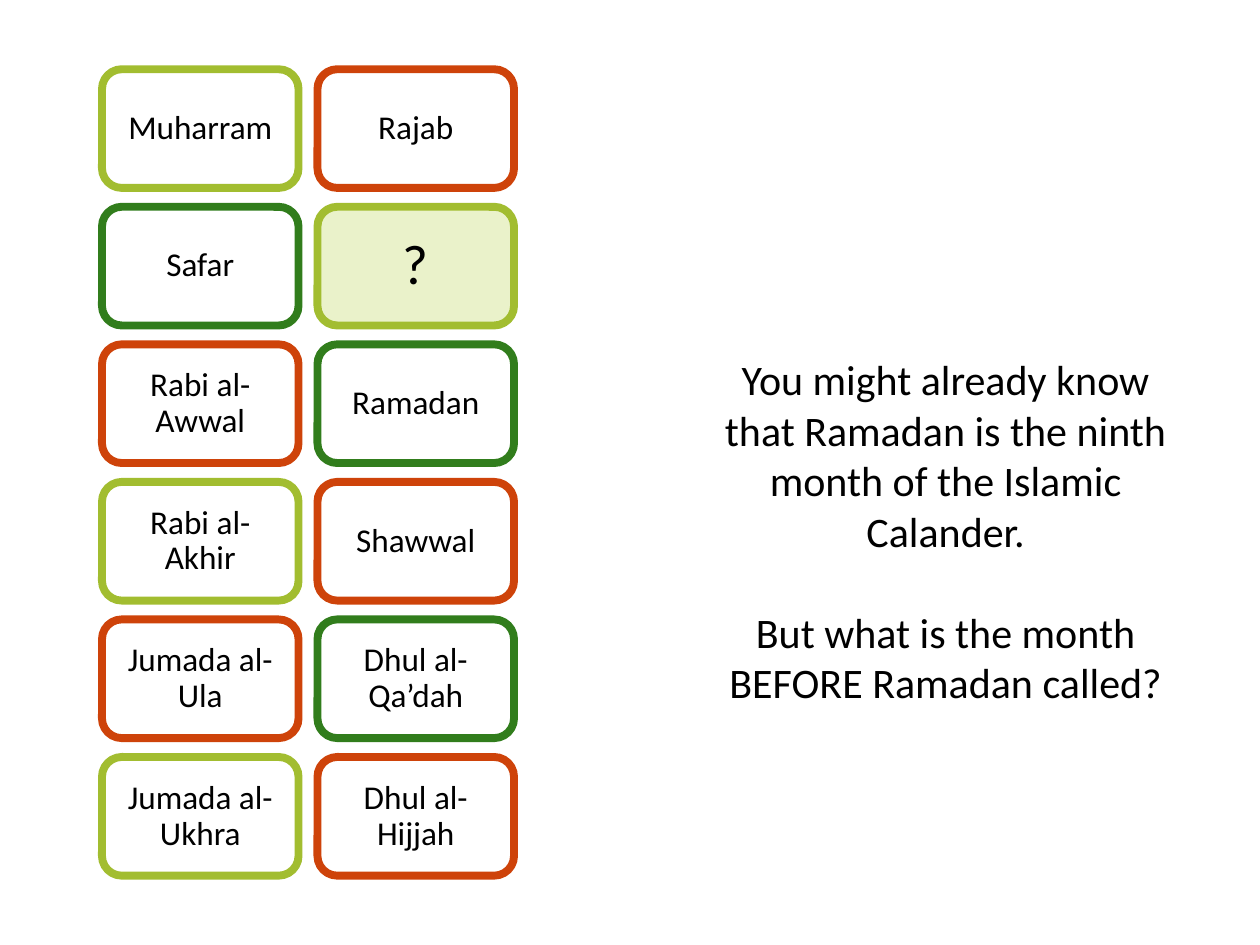
import pptx
import pptx.util
import pptx.dml.color
import pptx.enum.shapes
import pptx.enum.text
from dataclasses import dataclass

Inches, Pt = pptx.util.Inches, pptx.util.Pt
RGB = pptx.dml.color.RGBColor.from_string
ALIGN = pptx.enum.text.PP_ALIGN
ANCHOR = pptx.enum.text.MSO_ANCHOR


@dataclass(frozen=True)
class Theme:
    font: str = "Calibri"
    text: str = "000000"
    lime: str = "A2BD30"
    green: str = "317D1C"
    orange: str = "CE430A"
    highlight: str = "EAF2CA"
    month_size: int = 19
    mark_size: int = 32
    body_size: int = 24
    border: float = 4.5


T = Theme()

# Months in calendar order, filling the left column and then the right
MONTHS = [
    ("Muharram", T.lime), ("Safar", T.green), ("Rabi al-Awwal", T.orange),
    ("Rabi al-Akhir", T.lime), ("Jumada al-Ula", T.orange), ("Jumada al-Ukhra", T.lime),
    ("Rajab", T.orange), ("?", T.lime), ("Ramadan", T.green),
    ("Shawwal", T.orange), ("Dhul al-Qa’dah", T.green), ("Dhul al-Hijjah", T.orange),
]
ROWS, COLS = 6, 2
GAP_X, GAP_Y = Inches(0.15), Inches(0.15)

QUESTION = [
    "You might already know that\u00a0Ramadan is the ninth month of the Islamic Calander.",
    "But what is the month BEFORE Ramadan called?",
]


def add_text(p, text, size):
    p.alignment = ALIGN.CENTER
    r = p.add_run()
    r.text = text
    r.font.name, r.font.size = T.font, Pt(size)
    r.font.color.rgb = RGB(T.text)


def month_card(s, name, color, x, y, w, h):
    unknown = name == "?"
    sp = s.shapes.add_shape(pptx.enum.shapes.MSO_SHAPE.ROUNDED_RECTANGLE, x, y, w, h)
    sp.shadow.inherit = False
    if unknown:
        sp.fill.solid()
        sp.fill.fore_color.rgb = RGB(T.highlight)
    else:
        sp.fill.background()
    sp.line.color.rgb = RGB(color)
    sp.line.width = Pt(T.border)

    tf = sp.text_frame
    tf.word_wrap = True
    tf.vertical_anchor = ANCHOR.MIDDLE
    inset = Inches(0.13 if unknown else 0.08)
    tf.margin_left = tf.margin_right = tf.margin_top = tf.margin_bottom = inset
    p = tf.paragraphs[0]
    p.line_spacing = 0.9
    add_text(p, name, T.mark_size if unknown else T.month_size)


def month_grid(s, x, y, w, h):
    card_w = (w - (COLS - 1) * GAP_X) // COLS
    card_h = (h - (ROWS - 1) * GAP_Y) // ROWS
    for i, (name, color) in enumerate(MONTHS):
        col, row = divmod(i, ROWS)
        month_card(s, name, color, x + col * (card_w + GAP_X),
                   y + row * (card_h + GAP_Y), card_w, card_h)


def question_text(s, x, y, w, h):
    tf = s.shapes.add_textbox(x, y, w, h).text_frame
    tf.word_wrap = True
    tf.auto_size = pptx.enum.text.MSO_AUTO_SIZE.SHAPE_TO_FIT_TEXT
    for i, text in enumerate(QUESTION):
        p = tf.add_paragraph() if i else tf.paragraphs[0]
        if i:
            p.space_before = Pt(29)
        add_text(p, text, T.body_size)


def main():
    prs = pptx.Presentation()
    prs.slide_width, prs.slide_height = Inches(10), Inches(7.5)
    s = prs.slides.add_slide(prs.slide_layouts[6])

    # Calendar months on the left
    month_grid(s, Inches(0.81), Inches(0.55), Inches(3.27), Inches(6.4))
    # Question on the right
    question_text(s, Inches(5.36), Inches(2.76), Inches(4.29), Inches(2.93))

    prs.save("out.pptx")


if __name__ == "__main__":
    main()
